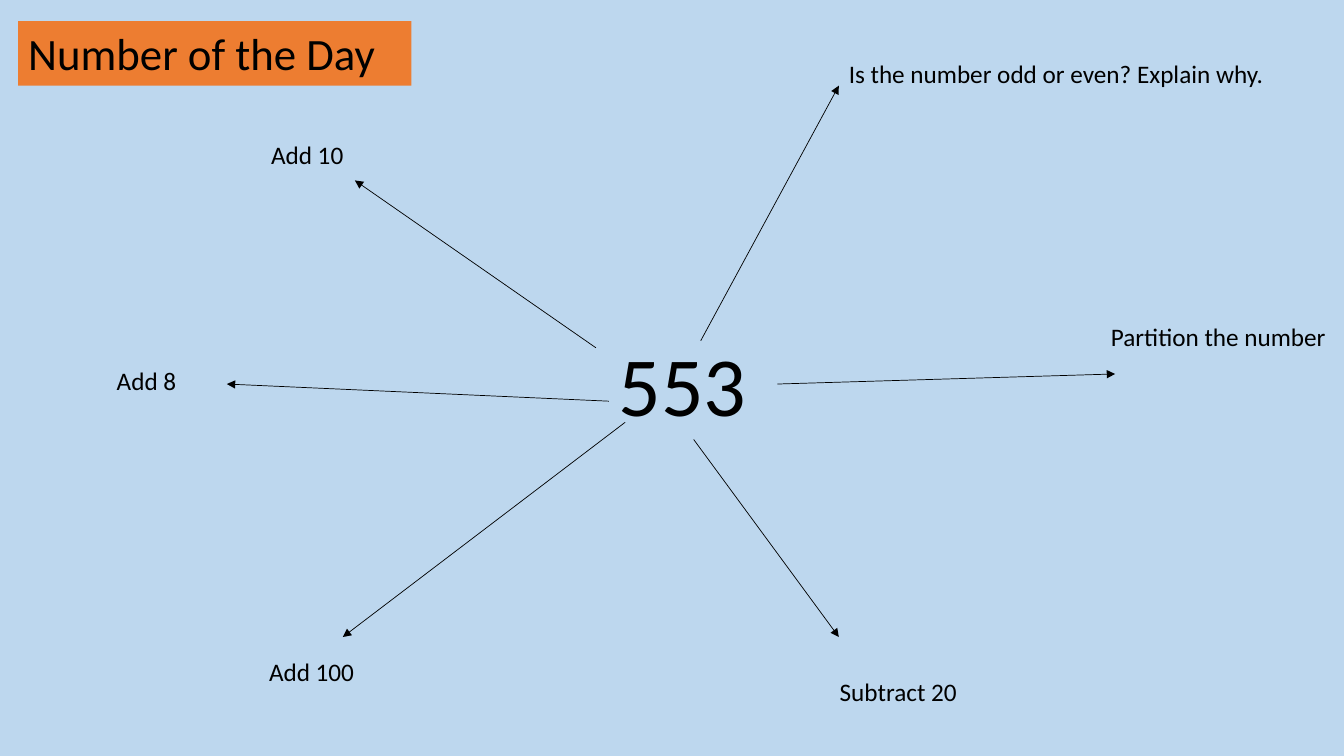
from lxml import etree
from pptx import Presentation
from pptx.dml.color import RGBColor
from pptx.enum.shapes import MSO_CONNECTOR
from pptx.enum.text import MSO_ANCHOR, MSO_AUTO_SIZE, PP_ALIGN
from pptx.oxml.ns import qn
from pptx.util import Inches, Pt

STRAIGHT = MSO_CONNECTOR.STRAIGHT
TOP = MSO_ANCHOR.TOP
LEFT = PP_ALIGN.LEFT
FIT_SHAPE = MSO_AUTO_SIZE.SHAPE_TO_FIT_TEXT
FIXED_SIZE = MSO_AUTO_SIZE.NONE

SKY = RGBColor(0xBD, 0xD7, 0xEE)
ORANGE = RGBColor(0xED, 0x7D, 0x31)
BLACK = RGBColor(0, 0, 0)

PROMPTS = [
    ("Is the number odd or even? Explain why.", (8.32, 0.53, 4.34, 0.4), (6.95, 3.38), (8.32, 0.85)),
    ("Partition the number", (10.92, 3.14, 2.42, 0.4), (7.71, 3.81), (11.06, 3.71)),
    ("Subtract 20", (8.23, 6.66, 1.57, 0.4), (6.88, 4.36), (8.32, 6.32)),
    ("Add 100", (2.57, 6.46, 1.06, 0.4), (6.2, 4.19), (3.4, 6.32)),
    ("Add 8", (1.06, 3.58, 0.8, 0.4), (6.04, 3.98), (2.25, 3.81)),
    ("Add 10", (2.59, 1.33, 0.93, 0.4), (5.91, 3.45), (3.52, 1.79)),
]


def write_text(shape, text, *, size, font="Calibri", color=BLACK, wrap=False, fit=FIT_SHAPE):
    frame = shape.text_frame
    frame.word_wrap = wrap
    frame.auto_size = fit
    frame.vertical_anchor = TOP
    paragraph = frame.paragraphs[0]
    paragraph.alignment = LEFT
    run = paragraph.add_run()
    run.text = text
    run.font.name = font
    run.font.size = Pt(size)
    run.font.color.rgb = color


class NumberSlide:
    title_size = 32
    number_size = 60
    prompt_size = 18
    line_width = 0.5

    def __init__(self, presentation):
        self.slide = presentation.slides.add_slide(presentation.slide_layouts[5])
        background = self.slide.background.fill
        background.solid()
        background.fore_color.rgb = SKY

    def title(self, text, box):
        shape = self.slide.shapes.title
        shape.left, shape.top, shape.width, shape.height = map(Inches, box)
        shape.fill.solid()
        shape.fill.fore_color.rgb = ORANGE
        write_text(shape, text, size=self.title_size, wrap=True, fit=FIXED_SIZE)

    def label(self, text, box, size):
        shape = self.slide.shapes.add_textbox(*map(Inches, box))
        write_text(shape, text, size=size)

    def arrow(self, start, end):
        connector = self.slide.shapes.add_connector(STRAIGHT, *map(Inches, start + end))
        connector.line.color.rgb = BLACK
        connector.line.width = Pt(self.line_width)
        outline = connector.element.find(".//" + qn("a:ln"))
        etree.SubElement(outline, qn("a:tailEnd"), type="triangle")
        etree.SubElement(outline.getparent(), qn("a:effectLst"))


def main():
    presentation = Presentation()
    presentation.slide_width = Inches(13.33)
    presentation.slide_height = Inches(7.5)
    page = NumberSlide(presentation)
    page.title("Number of the Day", (0.18, 0.21, 3.9, 0.64))
    page.label("553", (6.04, 3.25, 1.67, 1.11), page.number_size)
    for text, box, start, end in PROMPTS:
        page.arrow(start, end)
        page.label(text, box, page.prompt_size)
    presentation.save("out.pptx")


if __name__ == "__main__":
    main()
